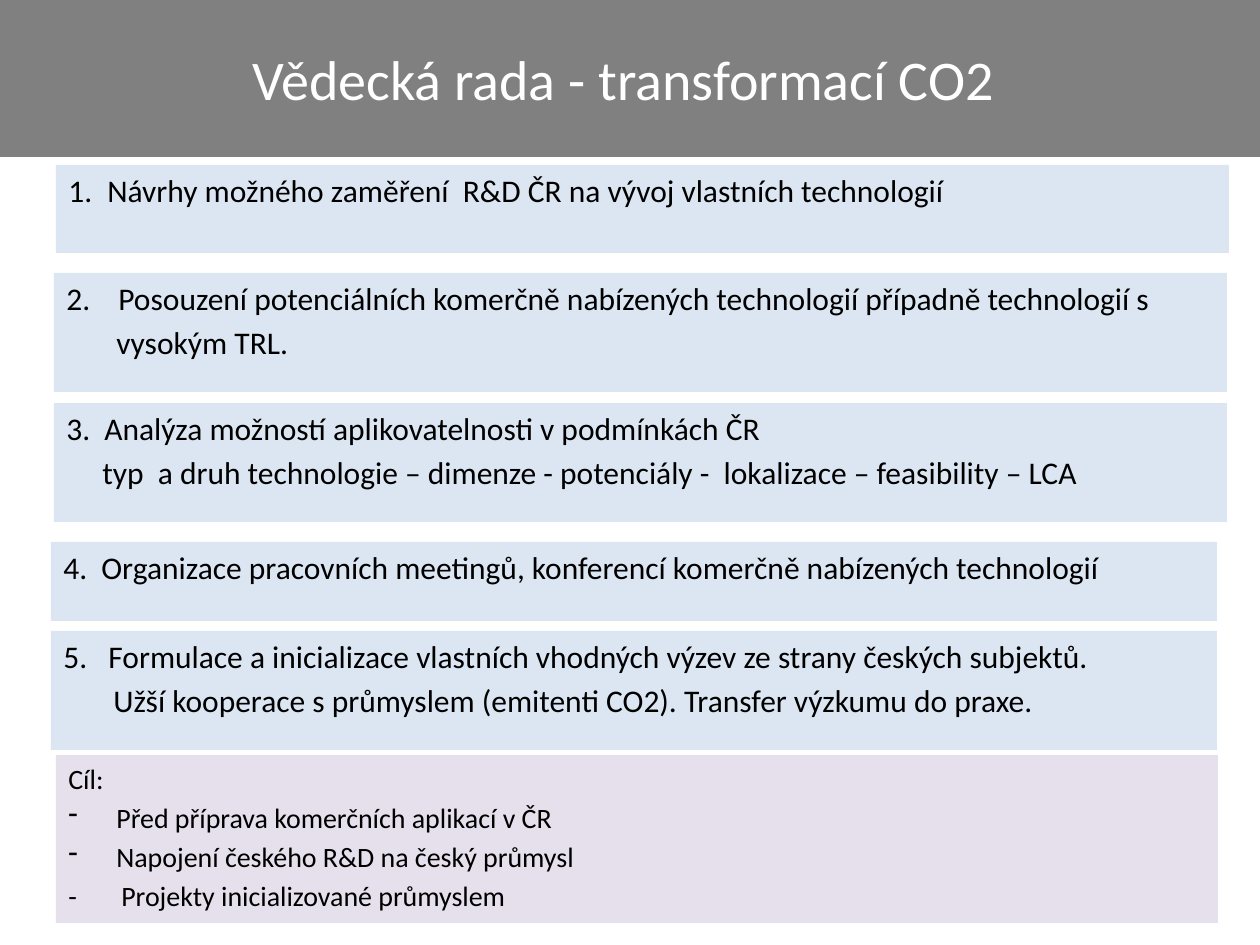
from lxml.etree import SubElement
from pptx import Presentation
from pptx.dml.color import RGBColor
from pptx.enum.shapes import MSO_SHAPE
from pptx.enum.text import MSO_ANCHOR, PP_ALIGN
from pptx.oxml.ns import qn
from pptx.util import Emu, Pt

PX = 914400 // 126
GREY = RGBColor(0x80, 0x80, 0x80)
BLUE = RGBColor(0xDC, 0xE6, 0xF2)
LILAC = RGBColor(0xE6, 0xE0, 0xEC)
BLACK = RGBColor(0, 0, 0)
WHITE = RGBColor(0xFF, 0xFF, 0xFF)


class Deck:
    font = "Calibri"

    def __init__(self, width, height):
        self.prs = Presentation()
        self.prs.slide_width, self.prs.slide_height = Emu(width * PX), Emu(height * PX)
        self.s = self.prs.slides.add_slide(self.prs.slide_layouts[6])

    def box(self, x, y, w, h, fill, anchor=MSO_ANCHOR.TOP):
        """Add a plain filled rectangle and return its text frame."""
        sp = self.s.shapes.add_shape(MSO_SHAPE.RECTANGLE, *(Emu(v * PX) for v in (x, y, w, h)))
        sp.shadow.inherit = False
        sp.fill.solid()
        sp.fill.fore_color.rgb = fill
        sp.line.fill.background()
        tf = sp.text_frame
        for name, value in {"word_wrap": True, "vertical_anchor": anchor}.items():
            setattr(tf, name, value)
        return tf

    def line(self, tf, text, size, color=BLACK, align=PP_ALIGN.LEFT, left=0, hang=False, bullet=None):
        """Write the next paragraph; every one after the first gets 20 % space before."""
        first = not tf.text
        p = tf.paragraphs[0] if first else tf.add_paragraph()
        p.alignment = align
        p.space_before = Pt(0 if first else size * 0.2)
        pPr = p._p.get_or_add_pPr()
        pPr.set("marL", str(left * PX))
        pPr.set("indent", str(-left * PX if hang else 0))
        if bullet:
            SubElement(pPr, qn("a:buChar"), char=bullet)
        r = p.add_run()
        r.text = text
        for name, value in {"name": self.font, "size": Pt(size)}.items():
            setattr(r.font, name, value)
        r.font.color.rgb = color

    def item(self, x, y, w, h, number, text, left, more=None, more_left=0):
        """Add a numbered point with an optional second line."""
        tf = self.box(x, y, w, h, BLUE)
        self.line(tf, f"{number}.\t{text}", 18, left=left, hang=True)
        if more:
            self.line(tf, more, 18, left=more_left)


def main():
    deck = Deck(1260, 945)

    # Title band
    tf = deck.box(0, 0, 1260, 157, GREY, MSO_ANCHOR.MIDDLE)
    deck.line(tf, "Vědecká rada - transformací CO2 ", 32, WHITE, PP_ALIGN.CENTER)

    # Numbered points: x, y, w, h, text, indent, second line, its indent
    points = [
        (56, 165, 1173, 88, "Návrhy možného zaměření  R&D ČR na vývoj vlastních technologií", 39),
        (54, 273, 1173, 119,
         "Posouzení potenciálních komerčně nabízených technologií případně technologií s", 52,
         "vysokým TRL.", 50),
        (54, 403, 1173, 119, "Analýza možností aplikovatelnosti v podmínkách ČR", 38,
         "typ  a druh technologie – dimenze - potenciály -  lokalizace – feasibility – LCA", 36),
        (51, 542, 1166, 79,
         "Organizace pracovních meetingů, konferencí komerčně nabízených technologií", 38),
        (51, 631, 1166, 119,
         "Formulace a inicializace vlastních vhodných výzev ze strany českých subjektů.", 45,
         "Užší kooperace s průmyslem (emitenti CO2). Transfer výzkumu do praxe.", 50),
    ]
    for number, (x, y, w, h, *texts) in enumerate(points, 1):
        deck.item(x, y, w, h, number, *texts)

    # Goals
    tf = deck.box(56, 755, 1162, 168, LILAC)
    deck.line(tf, "Cíl:", 16)
    for goal in ("Před příprava komerčních aplikací v ČR", "Napojení českého R&D na český průmysl"):
        deck.line(tf, goal, 16, left=48, hang=True, bullet="-")
    deck.line(tf, "-\tProjekty inicializované průmyslem", 16, left=53, hang=True)

    deck.prs.save("out.pptx")


if __name__ == "__main__":
    main()
